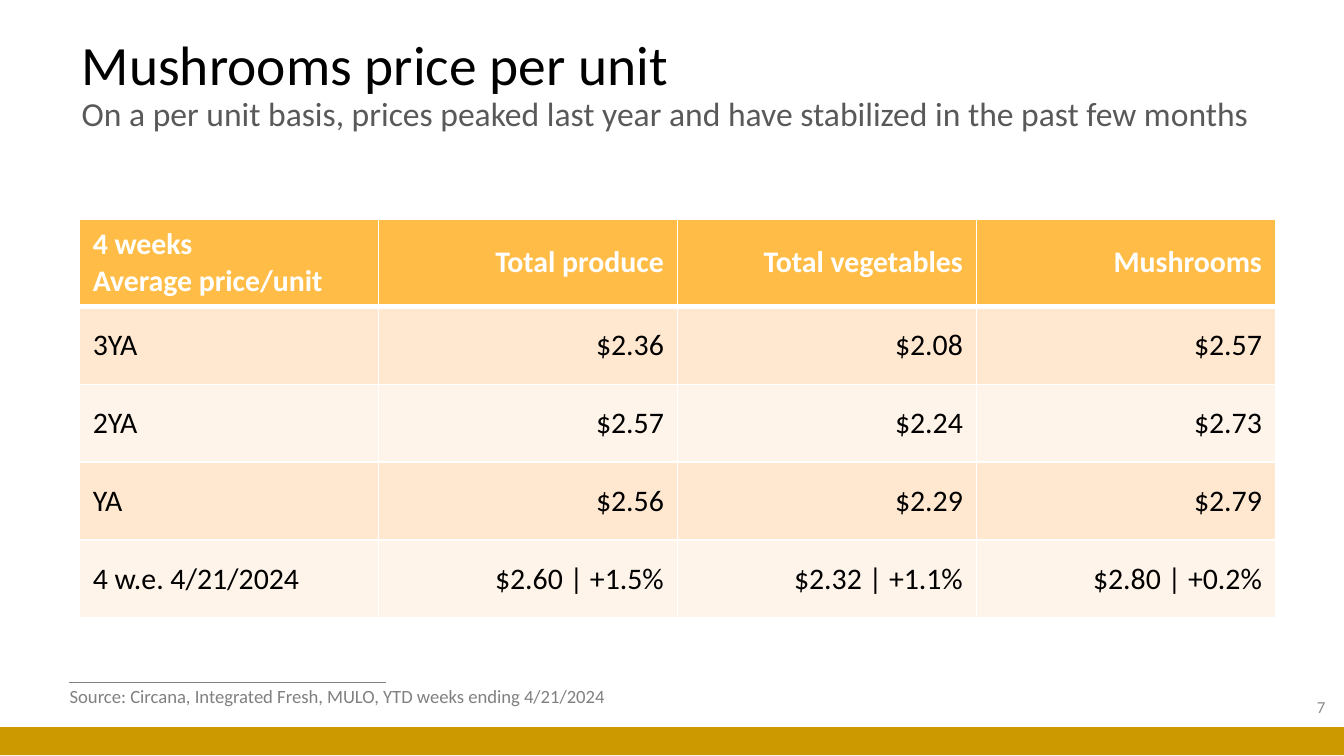
from lxml.etree import SubElement as Sub
from pptx import Presentation
from pptx.dml.color import RGBColor as RGB
from pptx.enum.shapes import MSO_CONNECTOR as LINK, MSO_SHAPE as SHAPE
from pptx.enum.text import MSO_ANCHOR as ANCHOR, MSO_AUTO_SIZE as FIT, PP_ALIGN as ALIGN
from pptx.oxml.ns import qn
from pptx.util import Inches, Pt

FONT = "Calibri"
BLACK = RGB(0x00, 0x00, 0x00)
WHITE = RGB(0xFF, 0xFF, 0xFF)
GOLD = RGB(0xCC, 0x99, 0x00)
AMBER = RGB(0xFF, 0xBD, 0x47)
PEACH = RGB(0xFF, 0xE8, 0xCF)
CREAM = RGB(0xFF, 0xF4, 0xE9)
DARK = RGB(0x59, 0x59, 0x59)
GRAY = RGB(0x80, 0x80, 0x80)
PALE = RGB(0x8C, 0x8C, 0x8C)

PRICES = [
    ("4 weeks\vAverage price/unit", "Total produce", "Total vegetables", "Mushrooms"),
    ("3YA", "$2.36", "$2.08", "$2.57"),
    ("2YA", "$2.57", "$2.24", "$2.73"),
    ("YA", "$2.56", "$2.29", "$2.79"),
    ("4 w.e. 4/21/2024", "$2.60 | +1.5%", "$2.32 | +1.1%", "$2.80 | +0.2%"),
]


def style(font, size, color, bold=False):
    font.name = FONT
    font.size = Pt(size)
    font.bold = bold
    font.color.rgb = color


def add_box(slide, area, anchor, wrap=True):
    frame = slide.shapes.add_textbox(*map(Inches, area)).text_frame
    frame.word_wrap = wrap
    frame.vertical_anchor = anchor
    return frame


def add_title(slide, head, sub):
    frame = add_box(slide, (0.51, 0.37, 9.06, 0.54), ANCHOR.MIDDLE)
    para = frame.paragraphs[0]
    para.line_spacing = 0.9
    run = para.add_run()
    run.text = head
    style(run.font, 29.7, BLACK)
    para.add_line_break()
    run = para.add_run()
    run.text = sub
    style(run.font, 18, DARK)


def add_note(frame, text, size, color, align=ALIGN.LEFT):
    para = frame.paragraphs[0]
    para.text = text
    para.alignment = align
    style(para.font, size, color)


def add_rule(slide, left, right, top):
    ends = map(Inches, (left, top, right, top))
    rule = slide.shapes.add_connector(LINK.STRAIGHT, *ends)
    rule.line.color.rgb = GRAY
    rule.line.width = Pt(0.5)
    Sub(rule._element.spPr, qn("a:effectLst"))


def add_band(slide, area):
    band = slide.shapes.add_shape(SHAPE.RECTANGLE, *map(Inches, area))
    band.shadow.inherit = False
    band.fill.solid()
    band.fill.fore_color.rgb = GOLD
    band.line.fill.background()


def set_edges(cell, top, base):
    props = cell._tc.get_or_add_tcPr()
    for side, width in zip("LRTB", (1, 1, top, base)):
        edge = Sub(props, qn(f"a:ln{side}"), w=str(Pt(width)))
        fill = Sub(edge, qn("a:solidFill"))
        Sub(fill, qn("a:srgbClr"), val=str(WHITE))


def fill_cell(cell, text, row, col):
    head = row == 0
    set_edges(cell, 3 if row == 1 else 1, 3 if head else 1)
    cell.fill.solid()
    cell.fill.fore_color.rgb = AMBER if head else (CREAM, PEACH)[row % 2]
    cell.vertical_anchor = ANCHOR.MIDDLE
    para = cell.text_frame.paragraphs[0]
    para.text = text
    para.alignment = ALIGN.RIGHT if col else ALIGN.LEFT
    style(para.font, 16, WHITE if head else BLACK, head)


def add_prices(slide, rows):
    area = map(Inches, (0.59, 1.63, 8.9, 2.96))
    table = slide.shapes.add_table(len(rows), len(rows[0]), *area).table
    for r, texts in enumerate(rows):
        table.rows[r].height = Inches(0.58 if r else 0.65)
        for c, text in enumerate(texts):
            fill_cell(table.cell(r, c), text, r, c)


def main():
    deck = Presentation()
    deck.slide_width = Inches(10)
    deck.slide_height = Inches(10 * 9 / 16)
    slide = deck.slides.add_slide(deck.slide_layouts[6])
    add_rule(slide, 0.51, 2.87, 5.08)
    add_band(slide, (0, 5.41, 10, 0.21))
    add_title(
        slide,
        "Mushrooms price per unit",
        "On a per unit basis, prices peaked last year and have stabilized in the past few months",
    )
    page = add_box(slide, (7.71, 5.11, 2.25, 0.3), ANCHOR.MIDDLE)
    add_note(page, "7", 9, PALE, ALIGN.RIGHT)
    source = add_box(slide, (0.42, 5.05, 4.31, 0.27), ANCHOR.TOP, False)
    source.auto_size = FIT.SHAPE_TO_FIT_TEXT
    add_note(source, "Source: Circana, Integrated Fresh, MULO, YTD weeks ending 4/21/2024", 10, GRAY)
    add_prices(slide, PRICES)
    deck.save("out.pptx")


if __name__ == "__main__":
    main()
